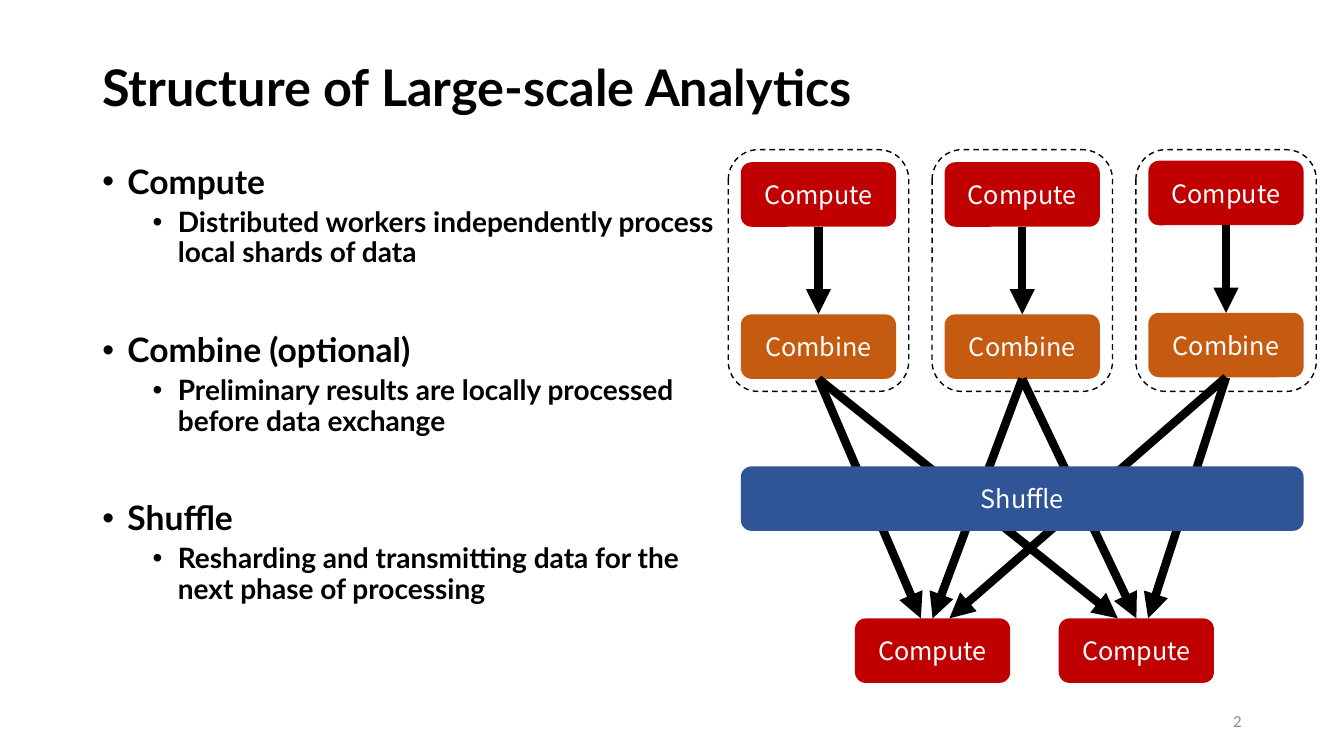
from dataclasses import dataclass
from typing import Optional

from lxml.etree import SubElement
from pptx import Presentation
from pptx.dml.color import RGBColor
from pptx.enum.dml import MSO_LINE
from pptx.enum.shapes import MSO_CONNECTOR, MSO_SHAPE
from pptx.enum.text import MSO_ANCHOR as Anchor, PP_ALIGN as Align
from pptx.oxml.ns import qn
from pptx.util import Inches, Pt

# The page is a grid of 160 columns by 90 rows, twelve to the inch.
PAGE_COLUMNS, PAGE_ROWS = 160, 90
BOTTOM, TOP = 2, 0


@dataclass(frozen=True)
class Theme:
    black: str = "000000"
    white: str = "FFFFFF"
    grey: str = "8C8C8C"
    compute: str = "C00000"
    combine: str = "C55A11"
    shuffle: str = "2F5597"
    text_font: str = "Lato"
    number_font: str = "Calibri"
    box_font: str = "Noto Sans CJK SC"
    title_size: int = 36
    topic_size: int = 24
    detail_size: int = 20
    box_size: int = 18
    number_size: int = 12
    arrow_width: int = 6
    frame_width: int = 1


@dataclass(frozen=True)
class Area:
    column: float
    row: float
    columns: float
    rows: float

    def emu(self) -> tuple:
        return tuple(map(grid, (self.column, self.row, self.columns, self.rows)))


@dataclass(frozen=True)
class Topic:
    heading: str
    detail: str


@dataclass(frozen=True)
class Flow:
    """An arrow from a combine box to a next-phase box, landing off its middle by shift."""
    worker: int
    target: int
    shift: float


THEME = Theme()
TITLE_AREA = Area(11, 4.8, 138, 12)
TOPICS_AREA = Area(11, 19.08, 77.16, 61.92)
NUMBER_AREA = Area(113, 83.4, 36, 4.8)

WORKERS = 3
DIAGRAM_LEFT, DIAGRAM_TOP = 88.2, 19.32
WORKER_PITCH, STAGE_PITCH = 24.26, 18.1
BOX_COLUMNS, BOX_ROWS = 18.48, 7.68
FRAME_MARGIN = 1.5
LAST_WORKER_RISE = 0.01
NEXT_PHASE_OFFSET = 0.56

TOPICS = [
    Topic("Compute", "Distributed workers independently process local shards of data"),
    Topic("Combine (optional)", "Preliminary results are locally processed before data exchange"),
    Topic("Shuffle", "Resharding and transmitting data for the next phase of processing"),
]
FLOWS = [
    Flow(0, 0, -1.4), Flow(0, 1, -2.2),
    Flow(1, 0, 0), Flow(1, 1, 0),
    Flow(2, 0, 2), Flow(2, 1, 1.4),
]


def grid(units: float) -> int:
    return Inches(units / 12)


def style(paragraph, font: str, size: int, color: str, bold: bool = False) -> None:
    for run in paragraph.runs:
        run.font.name = font
        run.font.size = Pt(size)
        run.font.bold = bold
        run.font.color.rgb = RGBColor.from_string(color)


def add_text_frame(slide, area: Area, anchor: Anchor):
    frame = slide.shapes.add_textbox(*area.emu()).text_frame
    frame.word_wrap = True
    frame.vertical_anchor = anchor
    return frame


def add_bullet(paragraph, text: str, level: int, size: int, gap: int) -> None:
    paragraph.text = text
    paragraph.level = level
    paragraph.line_spacing = 0.9
    paragraph.space_before = Pt(gap)
    style(paragraph, THEME.text_font, size, THEME.black, bold=True)
    properties = paragraph._p.get_or_add_pPr()
    properties.set("marL", str(Inches(0.25 + 0.5 * level)))
    properties.set("indent", str(Inches(-0.25)))
    SubElement(properties, qn("a:buFont"), typeface="Arial")
    SubElement(properties, qn("a:buChar"), char="•")


def add_topics(slide) -> None:
    frame = add_text_frame(slide, TOPICS_AREA, Anchor.TOP)
    for index, topic in enumerate(TOPICS):
        heading = frame.add_paragraph() if index else frame.paragraphs[0]
        add_bullet(heading, topic.heading, 0, THEME.topic_size, 46 if index else 10)
        add_bullet(frame.add_paragraph(), topic.detail, 1, THEME.detail_size, 5)


def stage_area(worker: float, stage: float, span: int = 0) -> Area:
    """Place a box by worker column and stage row; span counts extra worker columns."""
    return Area(DIAGRAM_LEFT + worker * WORKER_PITCH, DIAGRAM_TOP + stage * STAGE_PITCH,
                BOX_COLUMNS + span * WORKER_PITCH, BOX_ROWS)


def add_box(slide, label: str, color: str, area: Area):
    box = slide.shapes.add_shape(MSO_SHAPE.ROUNDED_RECTANGLE, *area.emu())
    box.shadow.inherit = False
    box.fill.solid()
    box.fill.fore_color.rgb = RGBColor.from_string(color)
    box.line.fill.background()
    box.text_frame.text = label
    box.text_frame.vertical_anchor = Anchor.MIDDLE
    caption = box.text_frame.paragraphs[0]
    caption.alignment = Align.CENTER
    style(caption, THEME.box_font, THEME.box_size, THEME.white)
    return box


def add_worker_frame(slide, worker: int) -> None:
    first = stage_area(worker, 0)
    area = Area(first.column - FRAME_MARGIN, first.row - FRAME_MARGIN,
                BOX_COLUMNS + 2 * FRAME_MARGIN, STAGE_PITCH + BOX_ROWS + 2 * FRAME_MARGIN)
    frame = slide.shapes.add_shape(MSO_SHAPE.ROUNDED_RECTANGLE, *area.emu())
    frame.shadow.inherit = False
    frame.fill.background()
    frame.line.color.rgb = RGBColor.from_string(THEME.black)
    frame.line.width = Pt(THEME.frame_width)
    frame.line.dash_style = MSO_LINE.DASH


def add_arrow(slide, source, target, shift: Optional[float] = 0) -> None:
    arrow = slide.shapes.add_connector(
        MSO_CONNECTOR.STRAIGHT,
        source.left + source.width // 2, source.top + source.height,
        target.left + target.width // 2 + grid(shift), target.top)
    arrow.begin_connect(source, BOTTOM)
    if not shift:
        arrow.end_connect(target, TOP)
    arrow.line.color.rgb = RGBColor.from_string(THEME.black)
    arrow.line.width = Pt(THEME.arrow_width)
    SubElement(arrow.line._get_or_add_ln(), qn("a:tailEnd"), type="triangle")
    SubElement(arrow._element.spPr, qn("a:effectLst"))


def add_diagram(slide) -> None:
    rises = [LAST_WORKER_RISE if worker == WORKERS - 1 else 0 for worker in range(WORKERS)]
    computes = [add_box(slide, "Compute", THEME.compute, stage_area(worker, -rise))
                for worker, rise in enumerate(rises)]
    combines = [add_box(slide, "Combine", THEME.combine, stage_area(worker, 1 - rise))
                for worker, rise in enumerate(rises)]
    next_phase = [add_box(slide, "Compute", THEME.compute, stage_area(NEXT_PHASE_OFFSET + place, 3))
                  for place in range(WORKERS - 1)]
    for worker, (compute, combine) in enumerate(zip(computes, combines)):
        add_worker_frame(slide, worker)
        add_arrow(slide, compute, combine)
    for flow in FLOWS:
        add_arrow(slide, combines[flow.worker], next_phase[flow.target], flow.shift)
    add_box(slide, "Shuffle", THEME.shuffle, stage_area(0, 2, span=WORKERS - 1))


def main() -> None:
    deck = Presentation()
    deck.slide_width, deck.slide_height = grid(PAGE_COLUMNS), grid(PAGE_ROWS)
    slide = deck.slides.add_slide(deck.slide_layouts[6])

    title = add_text_frame(slide, TITLE_AREA, Anchor.MIDDLE).paragraphs[0]
    title.text = "Structure of Large-scale Analytics"
    title.line_spacing = 0.9
    style(title, THEME.text_font, THEME.title_size, THEME.black, bold=True)

    add_topics(slide)

    number = add_text_frame(slide, NUMBER_AREA, Anchor.MIDDLE).paragraphs[0]
    number.text = "2"
    number.alignment = Align.RIGHT
    style(number, THEME.number_font, THEME.number_size, THEME.grey)

    add_diagram(slide)
    deck.save("out.pptx")


if __name__ == "__main__":
    main()
